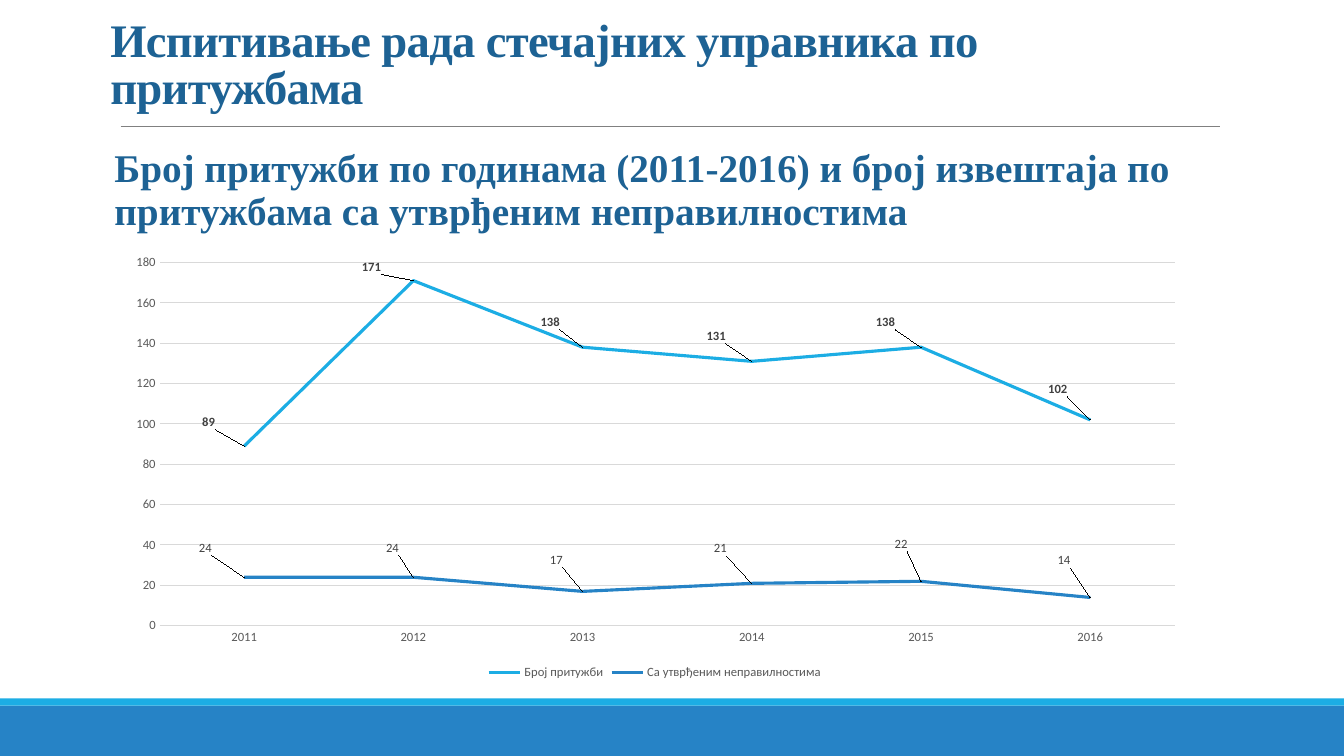
import pptx
import pptx.chart.data
import pptx.dml.color
import pptx.enum.chart
import pptx.enum.shapes
import pptx.enum.text
import pptx.oxml
import pptx.oxml.ns
import pptx.util

PX = 9525
SLIDE_WIDTH, SLIDE_HEIGHT = 1280, 720
BRIGHT_BLUE, DEEP_BLUE, HEADING_BLUE = "1CADE4", "2683C6", "1D6294"
GRID_GREY, AXIS_GREY, LABEL_GREY, RULE_GREY = "D9D9D9", "595959", "404040", "808080"
HEADING = "Испитивање рада стечајних управника по притужбама"
SUBHEADING = ("Број притужби по годинама (2011-2016) и број извештаја по "
              "притужбама са утврђеним неправилностима")
YEARS = ["2011", "2012", "2013", "2014", "2015", "2016"]
COMPLAINTS = {
    "name": "Број притужби", "color": BRIGHT_BLUE, "bold": True,
    "values": [89, 171, 138, 131, 138, 102],
    "offsets": [(-34, -23), (-40, -13), (-31, -24), (-34, -24), (-34, -24), (-31, -29)],
}
IRREGULARITIES = {
    "name": "Са утврђеним неправилностима", "color": DEEP_BLUE, "bold": False,
    "values": [24, 24, 17, 21, 22, 14],
    "offsets": [(-37, -28), (-20, -28), (-25, -30), (-30, -33), (-19, -35), (-25, -35)],
}
CHART_BOX = (109, 235, 1029, 416)
PLOT_BOX = (43, 15, 967, 346)


def px(length):
    """Turn pixels into EMU."""
    return pptx.util.Emu(length * PX)


def rgb(code):
    """Turn a hex string into a colour."""
    return pptx.dml.color.RGBColor.from_string(code)


def set_font(font, face, size, color, bold=False):
    """Set the face, size, colour and weight of a font."""
    font.name, font.size, font.bold = face, pptx.util.Pt(size), bold
    font.color.rgb = rgb(color)


def add_band(slide, top, height, color):
    """Add a full-width footer band."""
    band = slide.shapes.add_shape(pptx.enum.shapes.MSO_SHAPE.RECTANGLE,
                                  0, px(top), px(SLIDE_WIDTH), px(height))
    band.shadow.inherit = False
    band.fill.solid()
    band.fill.fore_color.rgb = rgb(color)
    band.line.fill.background()


def add_rule(slide, left, right, top):
    """Add the thin horizontal rule below the heading."""
    rule = slide.shapes.add_connector(pptx.enum.shapes.MSO_CONNECTOR.STRAIGHT,
                                      px(left), px(top), px(right), px(top))
    rule.line.color.rgb = rgb(RULE_GREY)
    rule.line.width = pptx.util.Pt(0.5)
    rule._element.spPr.append(pptx.oxml.parse_xml(
        f"<a:effectLst {pptx.oxml.ns.nsdecls('a')}/>"))


def fill_placeholder(placeholder, box, insets, anchor, text, size, spacing):
    """Move a placeholder and write one formatted paragraph in it."""
    placeholder.left, placeholder.top, placeholder.width, placeholder.height = map(px, box)
    frame = placeholder.text_frame
    frame.word_wrap = True
    frame.auto_size = pptx.enum.text.MSO_AUTO_SIZE.NONE
    frame.vertical_anchor = anchor
    (frame.margin_left, frame.margin_top,
     frame.margin_right, frame.margin_bottom) = map(px, insets)
    paragraph = frame.paragraphs[0]
    paragraph.alignment = pptx.enum.text.PP_ALIGN.LEFT
    paragraph.line_spacing = spacing
    run = paragraph.add_run()
    run.text = text
    set_font(run.font, "Times New Roman", size, HEADING_BLUE, True)
    return paragraph


def remove_bullet(paragraph):
    """Clear the bullet and indents of a paragraph."""
    properties = paragraph._p.get_or_add_pPr()
    properties.set("marL", "0")
    properties.set("indent", "0")
    properties.append(pptx.oxml.parse_xml(f"<a:buNone {pptx.oxml.ns.nsdecls('a')}/>"))


def manual_layout(box, size=False):
    """Build a chart layout from pixels within the chart."""
    parts = dict(zip("xywh", (box[i] / CHART_BOX[2 + i % 2] for i in range(len(box)))))
    modes = ('<c:layoutTarget val="inner"/><c:xMode val="edge"/><c:yMode val="edge"/>'
             if size else "")
    values = "".join(f'<c:{key} val="{value:.4f}"/>' for key, value in parts.items())
    return pptx.oxml.parse_xml(f"<c:layout {pptx.oxml.ns.nsdecls('c')}>"
                               f"<c:manualLayout>{modes}{values}</c:manualLayout></c:layout>")


def style_axis(axis):
    """Set the tick marks and tick label font of an axis."""
    axis.major_tick_mark = axis.minor_tick_mark = pptx.enum.chart.XL_TICK_MARK.NONE
    set_font(axis.tick_labels.font, "Calibri", 9, AXIS_GREY)


def style_series(series, details):
    """Format a line and place its value labels."""
    series.smooth = False
    series.marker.style = pptx.enum.chart.XL_MARKER_STYLE.NONE
    series.format.line.color.rgb = rgb(details["color"])
    series.format.line.width = pptx.util.Pt(2.25)
    set_font(series.data_labels.font, "Calibri", 9, LABEL_GREY, details["bold"])
    series.data_labels.show_value = True
    series.data_labels.position = pptx.enum.chart.XL_LABEL_POSITION.CENTER
    for index, offset in enumerate(details["offsets"]):
        label = series.points[index].data_label
        set_font(label.font, "Calibri", 9, LABEL_GREY, details["bold"])
        label.position = pptx.enum.chart.XL_LABEL_POSITION.CENTER
        label._dLbl.insert(1, manual_layout(offset))


def add_complaints_chart(slide):
    """Add the line chart of complaints and irregularities."""
    data = pptx.chart.data.CategoryChartData()
    data.categories = YEARS
    for details in (COMPLAINTS, IRREGULARITIES):
        data.add_series(details["name"], details["values"])
    chart = slide.shapes.add_chart(pptx.enum.chart.XL_CHART_TYPE.LINE,
                                   *map(px, CHART_BOX), data).chart
    set_font(chart.font, "Calibri", 10, "000000")
    chart.has_title = False
    chart.has_legend = True
    chart.legend.position = pptx.enum.chart.XL_LEGEND_POSITION.BOTTOM
    chart.legend.include_in_layout = False
    set_font(chart.legend.font, "Calibri", 9, AXIS_GREY)
    style_axis(chart.category_axis)
    style_axis(chart.value_axis)
    chart.value_axis.minimum_scale, chart.value_axis.maximum_scale = 0, 180
    chart.value_axis.major_unit = 20
    chart.value_axis.format.line.fill.background()
    for line in (chart.category_axis.format.line, chart.value_axis.major_gridlines.format.line):
        line.color.rgb = rgb(GRID_GREY)
        line.width = pptx.util.Pt(0.75)
    plot = chart.plots[0]
    plot.vary_by_categories = False
    for series, details in zip(plot.series, (COMPLAINTS, IRREGULARITIES)):
        style_series(series, details)
    plot_area = chart._chartSpace.chart.plotArea
    for layout in plot_area.findall(pptx.oxml.ns.qn("c:layout")):
        plot_area.remove(layout)
    plot_area.insert(0, manual_layout(PLOT_BOX, size=True))


def main():
    """Build and save the slide."""
    deck = pptx.Presentation()
    deck.slide_width, deck.slide_height = px(SLIDE_WIDTH), px(SLIDE_HEIGHT)
    slide = deck.slides.add_slide(deck.slide_layouts[1])
    add_band(slide, 672, 48, DEEP_BLUE)
    add_band(slide, 665, 7, BRIGHT_BLUE)
    add_rule(slide, 115, 1162, 120)
    heading = fill_placeholder(slide.shapes.title, (95, 30, 1076, 152), (10, 5, 10, 73),
                               pptx.enum.text.MSO_ANCHOR.BOTTOM, HEADING, 33.3, 0.85)
    heading.runs[0].font._element.set("spc", "-50")
    subheading = fill_placeholder(slide.placeholders[1], (109, 137, 1062, 131), (0, 5, 0, 5),
                                  pptx.enum.text.MSO_ANCHOR.TOP, SUBHEADING, 28, 0.9)
    subheading.space_before, subheading.space_after = pptx.util.Pt(12), pptx.util.Pt(2)
    remove_bullet(subheading)
    add_complaints_chart(slide)
    deck.save("out.pptx")


if __name__ == "__main__":
    main()
